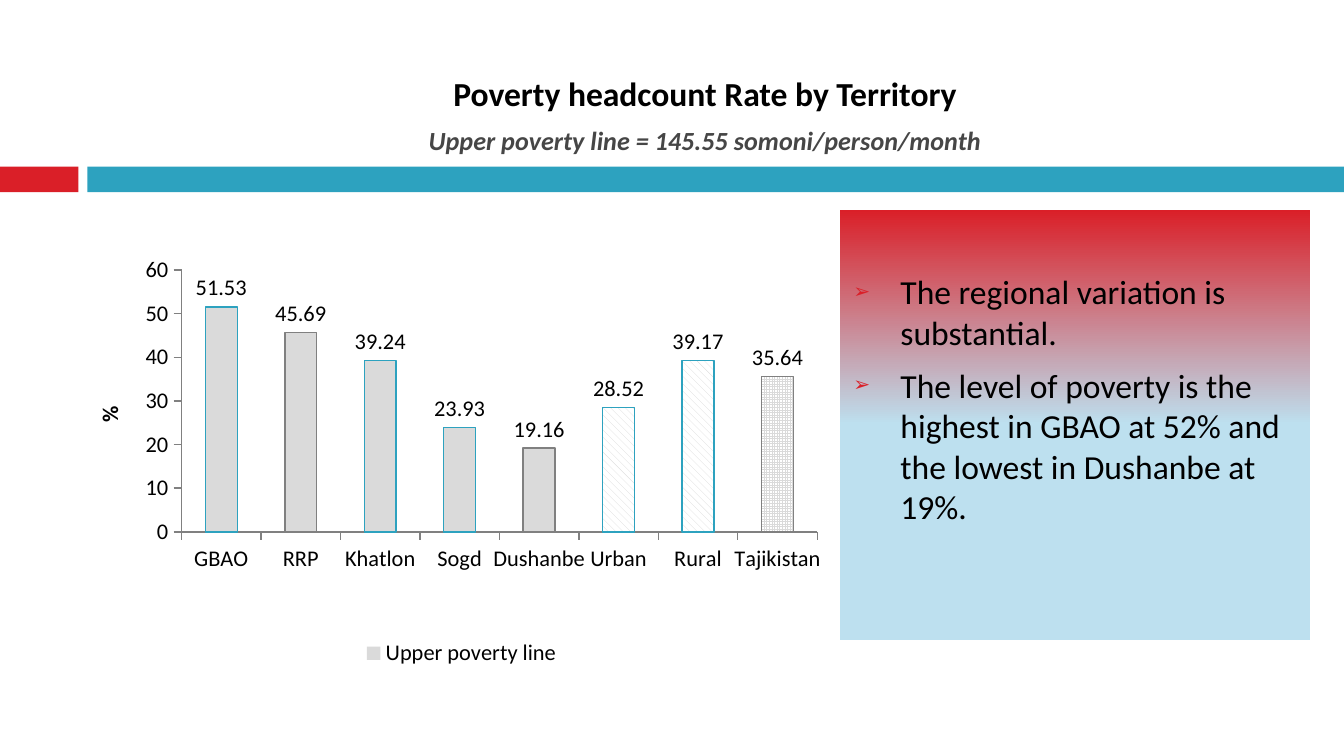
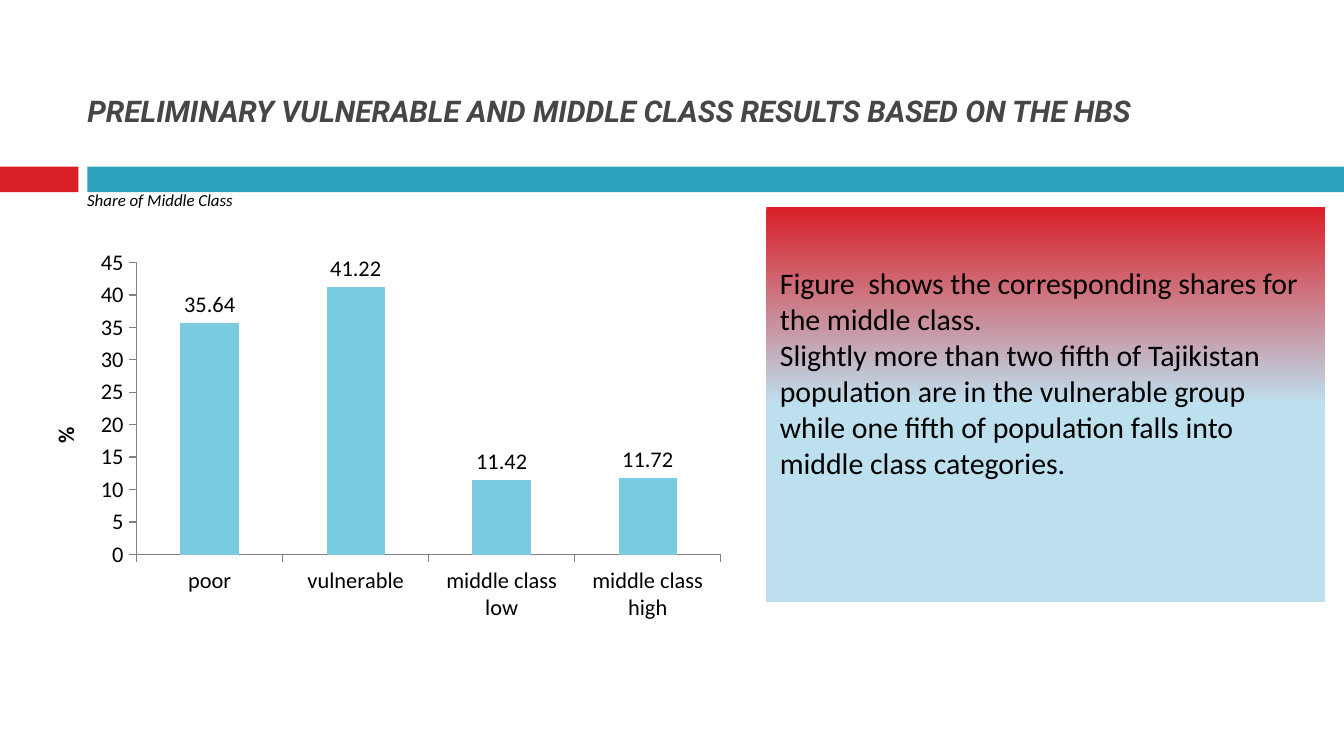
from dataclasses import dataclass

from lxml import etree
from pptx import Presentation
from pptx.chart.data import CategoryChartData
from pptx.dml.color import RGBColor
from pptx.enum import chart as ch
from pptx.enum import dml, shapes, text
from pptx.oxml import ns
from pptx.util import Pt

RED = RGBColor(0xDA, 0x1F, 0x28)
TEAL = RGBColor(0x2D, 0xA2, 0xBF)
SKY = RGBColor(0x7A, 0xCB, 0xE0)
PALE = RGBColor(0xBD, 0xE0, 0xEF)
SILVER = RGBColor(0xDA, 0xDA, 0xDA)
GREY = RGBColor(0x80, 0x80, 0x80)
DARK = RGBColor(0x46, 0x46, 0x46)
BLACK = RGBColor(0, 0, 0)
WHITE = RGBColor(0xFF, 0xFF, 0xFF)

DIAG = dml.MSO_PATTERN.WIDE_DOWNWARD_DIAGONAL
GRID = dml.MSO_PATTERN.SMALL_GRID


@dataclass
class Box:
    """Left, top, width and height in points."""
    left: float
    top: float
    width: float
    height: float

    def sides(self) -> tuple:
        return Pt(self.left), Pt(self.top), Pt(self.width), Pt(self.height)

    def place(self, shape) -> None:
        shape.left, shape.top, shape.width, shape.height = self.sides()


@dataclass
class Style:
    size: float
    color: RGBColor = BLACK
    bold: bool = False
    italic: bool = False
    face: str = "Calibri"

    def apply(self, font) -> None:
        font.size, font.name = Pt(self.size), self.face
        font.bold, font.italic = self.bold, self.italic
        font.color.rgb = self.color


@dataclass
class Line:
    text: str
    style: Style
    before: float = 0
    bullet: bool = False
    align: text.PP_ALIGN = text.PP_ALIGN.LEFT


@dataclass
class Bars:
    """A column chart: its data, its scale and its inner plot area."""
    box: Box
    name: str
    values: dict
    color: RGBColor
    top: float
    step: float
    plot: tuple
    legend: bool = False
    wrap: bool = True


BANDS = [(Box(0, 89.3, 42, 13.7), RED), (Box(46.8, 89.3, 673.2, 13.7), TEAL)]
HEAD = Style(18, bold=True)
SUB = Style(14, DARK, bold=True, italic=True)
CAPS = Style(16, DARK, bold=True, italic=True, face="Roboto")
LABEL = Style(12)

REGION = Bars(
    Box(44.6, 118, 405.4, 242), "Upper poverty line",
    {"GBAO": 51.53, "RRP": 45.69, "Khatlon": 39.24, "Sogd": 23.93,
     "Dushanbe": 19.16, "Urban": 28.52, "Rural": 39.17, "Tajikistan": 35.64},
    SILVER, 60, 10, (0.13, 0.11, 0.84, 0.58), legend=True, wrap=False)
EDGES = [TEAL, GREY, TEAL, TEAL, GREY, TEAL, TEAL, GREY]
HATCH = {5: DIAG, 6: DIAG, 7: GRID}

CLASS = Bars(
    Box(12.2, 130.3, 381.6, 206), "Series 1",
    {"poor": 35.64, "vulnerable": 41.22, "middle class low": 11.42,
     "middle class high": 11.72},
    SKY, 45, 5, (0.16, 0.05, 0.82, 0.76))


def add_tag(parent, tag: str, **attrs: str):
    return etree.SubElement(parent, ns.qn(tag), attrs)


def add_bands(slide) -> None:
    """Draw the two bars and hand them to the layout all slides share."""
    tree = slide.slide_layout.shapes._spTree
    for box, color in BANDS:
        bar = slide.shapes.add_shape(shapes.MSO_SHAPE.RECTANGLE, *box.sides())
        bar.shadow.inherit = False
        bar.fill.solid()
        bar.fill.fore_color.rgb = color
        bar.line.fill.background()
        tree.append(bar._element)


def set_mark(para, bullet: bool) -> None:
    """Give the paragraph an arrow bullet with a hanging indent, or none."""
    props = para._p.get_or_add_pPr()
    hang = Pt(25.2) if bullet else 0
    props.set("marL", str(hang))
    props.set("indent", str(-hang))
    if bullet:
        add_tag(add_tag(props, "a:buClr"), "a:srgbClr", val=str(RED))
        add_tag(props, "a:buSzPct", val="60000")
        add_tag(props, "a:buChar", char="➢")
    else:
        add_tag(props, "a:buNone")


def write(frame, lines: list[Line]) -> None:
    frame.word_wrap = True
    frame.auto_size = text.MSO_AUTO_SIZE.NONE
    frame.text = "\n".join(line.text for line in lines)
    for para, line in zip(frame.paragraphs, lines):
        para.alignment = line.align
        para.space_before = Pt(line.before)
        set_mark(para, line.bullet)
        for run in para.runs:
            line.style.apply(run.font)


def set_title(slide, box: Box, foot: float, lines: list[Line]) -> None:
    title = slide.shapes.title
    box.place(title)
    frame = title.text_frame
    write(frame, lines)
    frame.vertical_anchor = text.MSO_ANCHOR.BOTTOM
    frame.margin_bottom = Pt(foot)


def set_panel(slide, box: Box, head: float, lines: list[Line]) -> None:
    panel = slide.placeholders[1]
    box.place(panel)
    panel.fill.gradient()
    panel.fill.gradient_angle = 270
    stops = zip(panel.fill.gradient_stops, (RED, PALE), (0, 0.5))
    for stop, color, place in stops:
        stop.color.rgb, stop.position = color, place
    write(panel.text_frame, lines)
    panel.text_frame.vertical_anchor = text.MSO_ANCHOR.TOP
    panel.text_frame.margin_top = Pt(head)


def set_plot(chart, plot: tuple) -> None:
    """Fix the inner plot area, in shares of the chart."""
    area = chart._chartSpace.chart.plotArea
    for old in area.findall(ns.qn("c:layout")):
        area.remove(old)
    frame = etree.Element(ns.qn("c:layout"))
    area.insert(0, frame)
    inner = add_tag(frame, "c:manualLayout")
    add_tag(inner, "c:layoutTarget", val="inner")
    for key in "xy":
        add_tag(inner, f"c:{key}Mode", val="edge")
    for key, share in zip("xywh", plot):
        add_tag(inner, f"c:{key}", val=str(share))


def add_bars(slide, bars: Bars):
    data = CategoryChartData()
    data.categories = list(bars.values)
    data.add_series(bars.name, list(bars.values.values()))
    chart = slide.shapes.add_chart(
        ch.XL_CHART_TYPE.COLUMN_CLUSTERED, *bars.box.sides(), data).chart
    LABEL.apply(chart.font)
    chart.has_title = False
    chart.has_legend = bars.legend
    if bars.legend:
        chart.legend.position = ch.XL_LEGEND_POSITION.BOTTOM
        chart.legend.include_in_layout = False

    axis = chart.value_axis
    axis.minimum_scale, axis.maximum_scale = 0, bars.top
    axis.major_unit = bars.step
    axis.has_major_gridlines = False
    axis.axis_title.text_frame.text = "%"
    unit = axis.axis_title.text_frame.paragraphs[0].runs[0]
    Style(12, bold=True).apply(unit.font)
    for each in (axis, chart.category_axis):
        each.major_tick_mark = ch.XL_TICK_MARK.OUTSIDE
        each.format.line.color.rgb = GREY
    if not bars.wrap:
        LABEL.apply(chart.category_axis.tick_labels.font)

    plot = chart.plots[0]
    plot.gap_width = 150
    plot.vary_by_categories = False
    series = plot.series[0]
    series.format.fill.solid()
    series.format.fill.fore_color.rgb = bars.color
    labels = series.data_labels
    labels.show_value = True
    labels.number_format = "#,##0.00"
    labels.number_format_is_linked = False
    labels.position = ch.XL_LABEL_POSITION.OUTSIDE_END
    LABEL.apply(labels.font)
    set_plot(chart, bars.plot)
    return series


def trim_bars(series) -> None:
    """Outline every column and hatch the totals."""
    for i, edge in enumerate(EDGES):
        form = series.points[i].format
        form.line.color.rgb = edge
        form.line.width = Pt(0.75)
        if i in HATCH:
            form.fill.patterned()
            form.fill.pattern = HATCH[i]
            form.fill.back_color.rgb = WHITE
        else:
            form.fill.solid()
        form.fill.fore_color.rgb = SILVER


def add_note(slide, box: Box, line: Line) -> None:
    note = slide.shapes.add_textbox(*box.sides())
    write(note.text_frame, [line])
    note.text_frame.vertical_anchor = text.MSO_ANCHOR.MIDDLE


def region_slide(slide) -> None:
    mid = text.PP_ALIGN.CENTER
    set_title(slide, Box(39.6, 28, 676.4, 79.2), 24, [
        Line("Poverty headcount Rate by Territory", HEAD, align=mid),
        Line("Upper poverty line = 145.55 somoni/person/month", SUB, 5.7,
             align=mid)])
    trim_bars(add_bars(slide, REGION))
    body = Style(18)
    set_panel(slide, Box(450, 112.3, 252, 230.4), 33, [
        Line("The regional variation is substantial.", body, 7, True),
        Line("The level of poverty is the highest in GBAO at 52% and the "
             "lowest in Dushanbe at 19%.", body, 7, True)])


def class_slide(slide) -> None:
    set_title(slide, Box(39.6, 40.3, 678.2, 32.4), 3.6, [
        Line("PRELIMINARY VULNERABLE AND MIDDLE CLASS RESULTS BASED ON "
             "THE HBS", CAPS)])
    body = Style(16)
    set_panel(slide, Box(410.6, 111, 299.5, 211.7), 31, [
        Line("Figure  shows the corresponding shares for the middle class.",
             body),
        Line("Slightly more than two fifth of Tajikistan population are in "
             "the vulnerable group while one fifth of population falls into "
             "middle class categories.", body)])
    add_bars(slide, CLASS)
    add_note(slide, Box(39.6, 98, 162, 18),
             Line("Share of Middle Class", Style(9, italic=True)))


def main() -> None:
    deck = Presentation()
    deck.slide_width, deck.slide_height = Pt(720), Pt(405)
    layout = deck.slide_layouts[1]
    first, second = (deck.slides.add_slide(layout) for _ in range(2))
    add_bands(first)
    region_slide(first)
    class_slide(second)
    deck.save("out.pptx")


if __name__ == "__main__":
    main()
